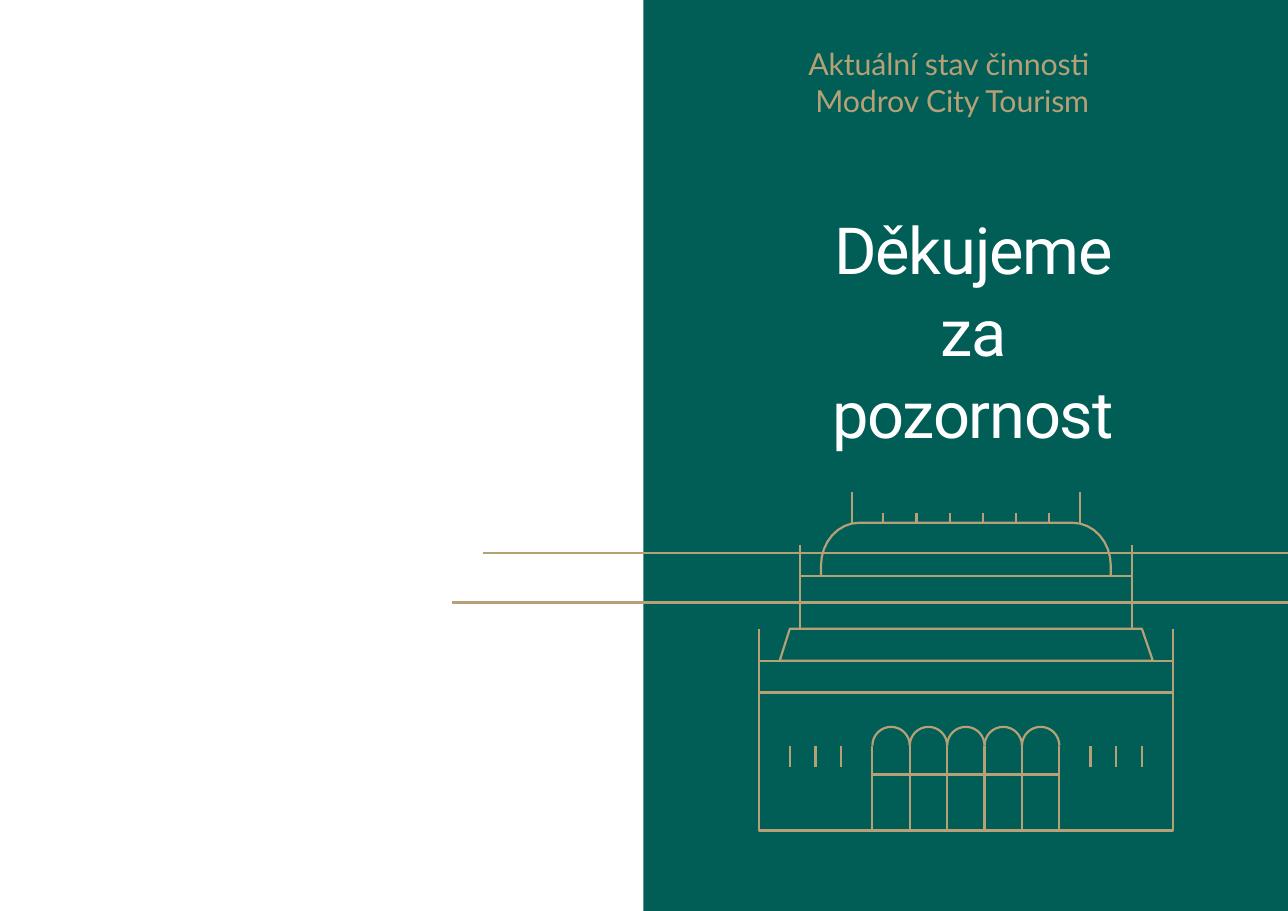
from math import cos, pi, sin

from lxml.etree import SubElement
from pptx import Presentation
from pptx.dml.color import RGBColor
from pptx.enum.shapes import MSO_CONNECTOR, MSO_SHAPE
from pptx.enum.text import MSO_ANCHOR, MSO_AUTO_SIZE, PP_ALIGN
from pptx.oxml.ns import qn
from pptx.util import Inches, Mm, Pt

GREEN = RGBColor(0x00, 0x5E, 0x57)
GOLD = RGBColor(0xB7, 0xA0, 0x76)
WHITE = RGBColor(0xFF, 0xFF, 0xFF)

# A3 landscape
prs = Presentation()
prs.slide_width, prs.slide_height = Mm(420), Mm(297)
slide = prs.slides.add_slide(prs.slide_layouts[5])
shapes = slide.shapes


def draw_line(x1, y1, x2, y2, width=2):
    line = shapes.add_connector(MSO_CONNECTOR.STRAIGHT, Inches(x1), Inches(y1),
                                Inches(x2), Inches(y2))
    line.line.color.rgb = GOLD
    line.line.width = Pt(width)
    SubElement(line._element.spPr, qn("a:effectLst"))


def draw_outline(points, close=False):
    first, *rest = [(Inches(x), Inches(y)) for x, y in points]
    builder = shapes.build_freeform(*first)
    builder.add_line_segments(rest, close=close)
    outline = builder.convert_to_shape()
    outline.shadow.inherit = False
    outline.fill.background()
    outline.line.color.rgb = GOLD
    outline.line.width = Pt(2)


# Green right half, behind the title
panel_left = Inches(8.26)
panel = shapes.add_shape(MSO_SHAPE.RECTANGLE, panel_left, 0,
                         prs.slide_width - panel_left, prs.slide_height)
panel.shadow.inherit = False
panel.fill.solid()
panel.fill.fore_color.rgb = GREEN
panel.line.fill.background()
shapes._spTree.insert(2, panel._element)

# Dome with rounded shoulders
quarter = [i * pi / 16 for i in range(9)]
left_shoulder = [(11.03 - 0.49 * cos(a), 7.26 - 0.55 * sin(a)) for a in quarter]
right_shoulder = [(13.77 + 0.49 * sin(a), 7.26 - 0.55 * cos(a)) for a in quarter]
draw_outline([(10.54, 7.39), *left_shoulder, *right_shoulder, (14.26, 7.39)])

# Storeys and the sloping roof
for left, top, width, height in [(10.27, 7.39, 4.26, 0.68), (9.74, 8.48, 5.32, 0.41),
                                 (9.74, 8.89, 5.32, 1.77)]:
    storey = shapes.add_shape(MSO_SHAPE.RECTANGLE, Inches(left), Inches(top),
                              Inches(width), Inches(height))
    storey.shadow.inherit = False
    storey.fill.background()
    storey.line.color.rgb = GOLD
    storey.line.width = Pt(2)
draw_outline([(14.8, 8.48), (10.01, 8.48), (10.14, 8.07), (14.66, 8.07)], close=True)

# Corner masts
for x, top in [(10.94, 6.31), (13.87, 6.31), (10.27, 6.99), (14.53, 6.99),
               (9.74, 8.07), (15.06, 8.07)]:
    draw_line(x, top, x, top + 0.41)

# Short posts on the dome
for i in range(6):
    x = 11.34 + 2.13 * i / 5
    draw_line(x, 6.58, x, 6.71)

# Slit windows on both sides of the entrance
for side in (10.14, 14):
    for i in range(3):
        x = side + 0.33 * i
        draw_line(x, 9.57, x, 9.84)

# Arcade of five arches
for i in range(5):
    centre = 11.44 + 0.48 * i
    draw_outline([(centre - 0.24 * cos(k * pi / 16), 9.57 - 0.24 * sin(k * pi / 16))
                  for k in range(17)])
for i in range(6):
    x = 11.2 + 0.48 * i
    draw_line(x, 9.57, x, 10.66)
draw_line(11.2, 9.94, 13.6, 9.94)

# Long lines across both halves
draw_line(6.2, 7.1, 16.53, 7.1, 2.46)
draw_line(5.8, 7.73, 16.53, 7.73, 2.44)

# Closing words and heading
closing = shapes.title
closing.left, closing.top = Inches(10.29), Inches(2.63)
closing.width, closing.height = Inches(4.4), Inches(2.09)
heading = shapes.add_textbox(Inches(9.24), Inches(0.57), Inches(5.97), Inches(0.97))

for box, lines, font, size, color, spacing, tracking in [
    (closing, ["Děkujeme za pozornost"], "Roboto", 60, WHITE, 1.05, "-120"),
    (heading, ["Aktuální stav činnosti ", "Modrov City Tourism"], "Lato", 28, GOLD, 1, "-10"),
]:
    frame = box.text_frame
    frame.text = "\n".join(lines)
    frame.word_wrap = True
    frame.auto_size = MSO_AUTO_SIZE.NONE
    frame.vertical_anchor = MSO_ANCHOR.TOP
    frame.margin_left = frame.margin_right = frame.margin_bottom = 0
    frame.margin_top = Inches(0.01)
    for paragraph in frame.paragraphs:
        paragraph.alignment = PP_ALIGN.CENTER
        paragraph.line_spacing = spacing
        paragraph.space_before = Pt(1)
        paragraph.font.name = font
        paragraph.font.size = Pt(size)
        paragraph.font.color.rgb = color
        for run in paragraph.runs:
            run._r.get_or_add_rPr().set("spc", tracking)

prs.save("out.pptx")
